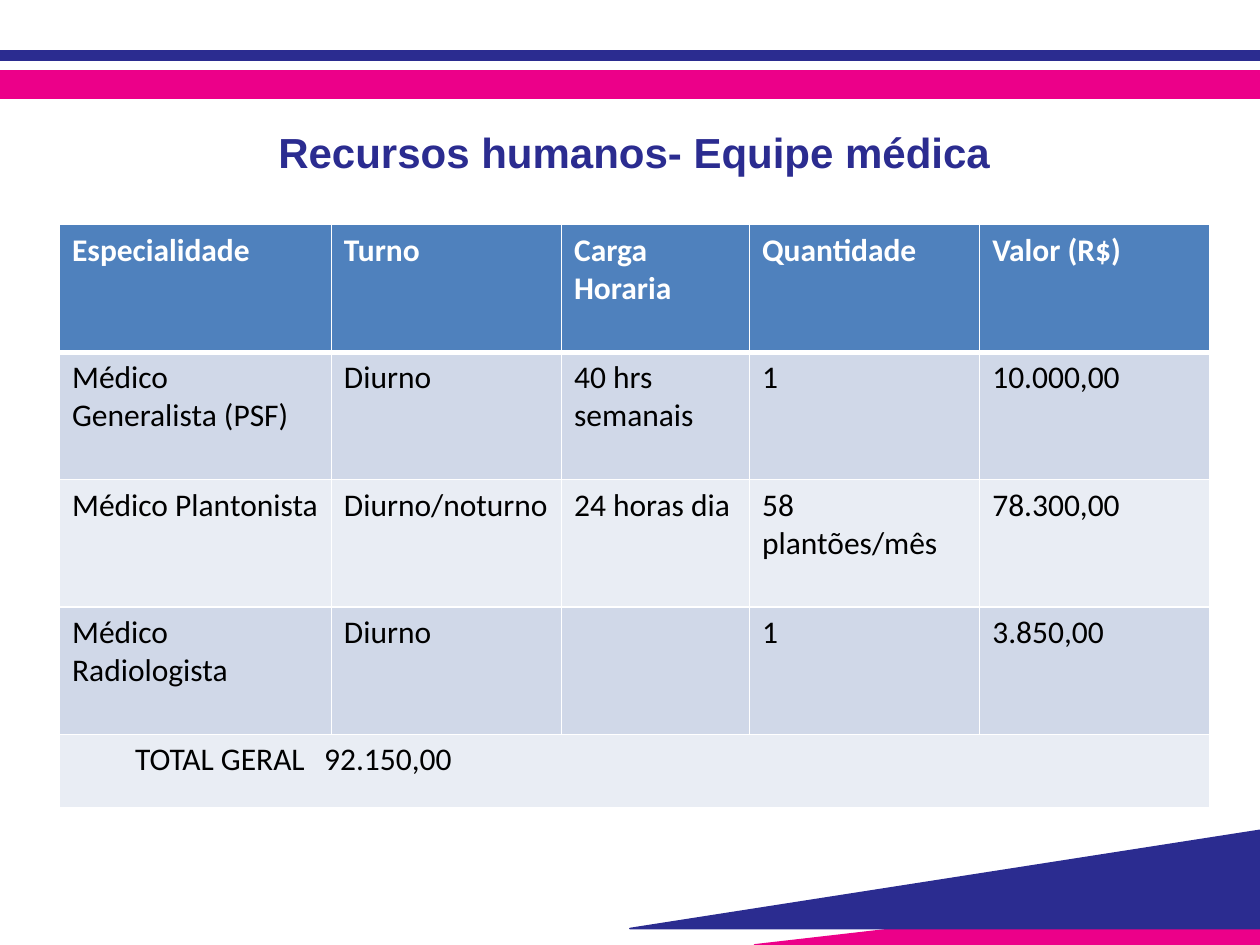
from dataclasses import dataclass

from lxml.etree import SubElement
from pptx import Presentation
from pptx.dml.color import RGBColor
from pptx.enum.shapes import MSO_SHAPE
from pptx.enum.text import MSO_ANCHOR, PP_ALIGN
from pptx.oxml.ns import qn
from pptx.util import Cm, Pt


@dataclass(frozen=True)
class Theme:
    blue: str = "2B2C90"
    pink: str = "EC0089"
    head: str = "4F81BD"
    odd: str = "D0D8E8"
    even: str = "E9EDF4"
    white: str = "FFFFFF"
    black: str = "000000"
    title_font: str = "Arial"
    body_font: str = "Calibri"
    title_size: int = 24
    body_size: int = 18
    edge: float = 0.96
    thin: float = 1
    thick: float = 3


class Deck:
    def __init__(self, theme):
        self.theme = theme
        self.prs = Presentation()
        self.prs.slide_width = Cm(25.4)
        self.prs.slide_height = Cm(19.05)
        self.slide = self.prs.slides.add_slide(self.prs.slide_layouts[5])

    def style(self, para, face, size, color, bold):
        for run in para.runs:
            font = run.font
            font.name = face
            font.size = Pt(size)
            font.bold = bold
            font.color.rgb = RGBColor.from_string(color)

    def paint(self, shape, color):
        rgb = RGBColor.from_string(color)
        shape.shadow.inherit = False
        shape.fill.solid()
        shape.fill.fore_color.rgb = rgb
        shape.line.color.rgb = rgb
        shape.line.width = Pt(self.theme.edge)

    def bar(self, top, height, color):
        shape = self.slide.shapes.add_shape(
            MSO_SHAPE.RECTANGLE, 0, Cm(top), self.prs.slide_width, Cm(height))
        self.paint(shape, color)

    def wedge(self, left, top, base, color):
        right = self.prs.slide_width
        form = self.slide.shapes.build_freeform(right, Cm(top))
        form.add_line_segments([(Cm(left), Cm(base)), (right, Cm(base))])
        self.paint(form.convert_to_shape(), color)

    def title(self, text, left, top, width, height):
        look = self.theme
        shape = self.slide.shapes.title
        shape.left, shape.top = Cm(left), Cm(top)
        shape.width, shape.height = Cm(width), Cm(height)
        frame = shape.text_frame
        frame.margin_left = frame.margin_right = 0
        frame.margin_top = frame.margin_bottom = 0
        frame.vertical_anchor = MSO_ANCHOR.MIDDLE
        frame.text = text
        para = frame.paragraphs[0]
        para.alignment = PP_ALIGN.CENTER
        self.style(para, look.title_font, look.title_size, look.blue, True)

    def border(self, cell, widths):
        props = cell._tc.get_or_add_tcPr()
        for side, width in zip("LRTB", widths):
            line = SubElement(props, qn(f"a:ln{side}"), w=str(Pt(width)))
            fill = SubElement(line, qn("a:solidFill"))
            SubElement(fill, qn("a:srgbClr"), val=self.theme.white)

    def cell(self, cell, text, row):
        look = self.theme
        head = row == 0
        thin, thick = look.thin, look.thick
        self.border(cell, (thin, thin, thick if row == 1 else thin,
                           thick if head else thin))
        color = look.head if head else look.odd if row % 2 else look.even
        cell.fill.solid()
        cell.fill.fore_color.rgb = RGBColor.from_string(color)
        cell.text_frame.text = text
        ink = look.white if head else look.black
        self.style(cell.text_frame.paragraphs[0], look.body_font,
                   look.body_size, ink, head)

    def table(self, rows, left, top, widths, heights):
        grid = self.slide.shapes.add_table(
            len(rows), len(widths), Cm(left), Cm(top),
            Cm(sum(widths)), Cm(sum(heights))).table
        for col, width in zip(grid.columns, widths):
            col.width = Cm(width)
        for line, height in zip(grid.rows, heights):
            line.height = Cm(height)
        for r, row in enumerate(rows):
            for c, text in enumerate(row):
                self.cell(grid.cell(r, c), text, r)
        return grid

    def total(self, grid, label, value, stops):
        row = len(grid.rows) - 1
        cell = grid.cell(row, 0)
        cell.merge(grid.cell(row, len(grid.columns) - 1))
        props = cell.text_frame.paragraphs[0]._p.get_or_add_pPr()
        tabs = SubElement(props, qn("a:tabLst"))
        for stop in stops:
            SubElement(tabs, qn("a:tab"), pos=str(Cm(stop)), algn="l")
        self.cell(cell, f"\t{label}\t{value}", row)


def main():
    theme = Theme()
    deck = Deck(theme)
    deck.bar(1.02, 0.2, theme.blue)
    deck.bar(1.42, 0.57, theme.pink)
    deck.wedge(15.21, 17.88, 19.05, theme.pink)
    deck.wedge(12.7, 16.74, 18.72, theme.blue)
    deck.title("Recursos humanos- Equipe médica", 1.42, 2.54, 22.73, 1.02)
    rows = [
        ("Especialidade", "Turno", "Carga Horaria", "Quantidade", "Valor (R$)"),
        ("Médico Generalista (PSF)", "Diurno", "40 hrs semanais", "1",
         "10.000,00"),
        ("Médico Plantonista", "Diurno/noturno", "24 horas dia",
         "58 plantões/mês", "78.300,00"),
        ("Médico Radiologista", "Diurno", "", "1", "3.850,00"),
        (),
    ]
    widths = [5.48, 4.64, 3.79, 4.64, 4.64]
    grid = deck.table(rows, 1.2, 4.53, widths, [2.57] * 4 + [1.48])
    deck.total(grid, "TOTAL GERAL", "92.150,00", (1.68, sum(widths[:-1])))
    deck.prs.save("out.pptx")


if __name__ == "__main__":
    main()
